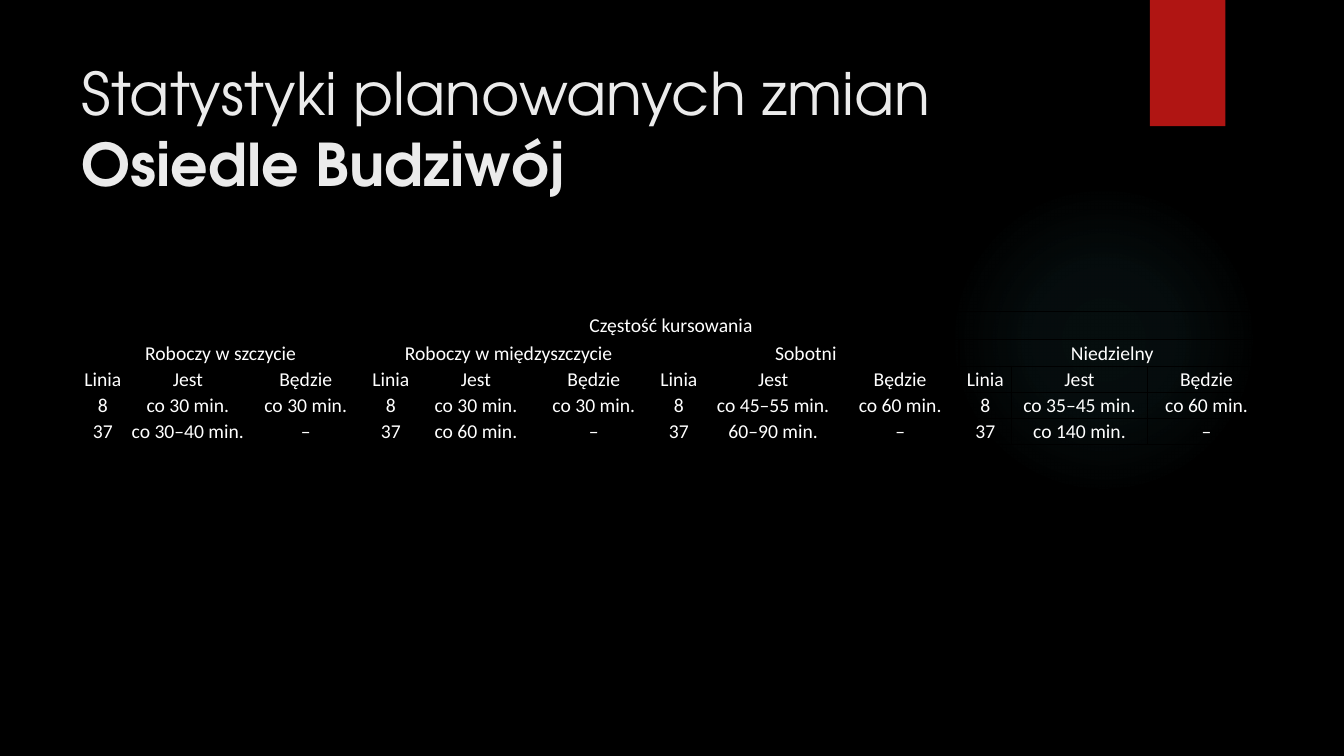
from dataclasses import dataclass

from lxml import etree
from pptx import Presentation
from pptx.dml.color import RGBColor
from pptx.enum.shapes import MSO_SHAPE
from pptx.enum.text import MSO_ANCHOR, PP_ALIGN
from pptx.oxml import parse_xml
from pptx.oxml.ns import nsdecls, qn
from pptx.util import Cm, Pt

ELLIPSE = MSO_SHAPE.OVAL
RECTANGLE = MSO_SHAPE.RECTANGLE
MIDDLE = MSO_ANCHOR.MIDDLE
CENTER = PP_ALIGN.CENTER


@dataclass(frozen=True)
class Theme:
    background: str = "000000"
    glow: str = "50B9C1"
    accent: str = "B01513"
    title: str = "EBEBEB"
    body: str = "FFFFFF"
    border: str = "000000"
    title_font: str = "TeX Gyre Adventor"
    body_font: str = "Calibri"
    title_size: float = 42
    body_size: float = 14
    thick: float = 1
    thin: float = 0.5


THEME = Theme()
GLOW_STOPS = [(0, 7), (36, 6), (69, 0)]
GROUP_SIZE = 3
TABLE_TITLE = "Częstość kursowania"
HEADINGS = ["Linia", "Jest", "Będzie"]
DAY_TYPES = [
    ("Roboczy w szczycie", 2.97,
     [("8", "co 30 min.", "co 30 min."), ("37", "co 30–40 min.", "–")]),
    ("Roboczy w międzyszczycie", 2.97,
     [("8", "co 30 min.", "co 30 min."), ("37", "co 60 min.", "–")]),
    ("Sobotni", 3.43,
     [("8", "co 45–55 min.", "co 60 min."), ("37", "60–90 min.", "–")]),
    ("Niedzielny", 3.43,
     [("8", "co 35–45 min.", "co 60 min."), ("37", "co 140 min.", "–")]),
]


def apply_format(target, values):
    for name, value in values.items():
        setattr(target, name, value)


def style_font(font, name, size, color, bold=False):
    apply_format(font, {"name": name, "size": Pt(size), "bold": bold})
    font.color.rgb = RGBColor.from_string(color)


def add_plain_shape(page, kind, left, top, width, height):
    shape = page.shapes.add_shape(kind, Cm(left), Cm(top), Cm(width), Cm(height))
    shape.shadow.inherit = False
    shape.line.fill.background()
    return shape


def add_glow(page):
    glow = add_plain_shape(page, ELLIPSE, 23.9, 4.65, 7.82, 7.82)
    stops = "".join(
        f'<a:gs pos="{position * 1000}"><a:srgbClr val="{THEME.glow}">'
        f'<a:alpha val="{alpha * 1000}"/></a:srgbClr></a:gs>'
        for position, alpha in GLOW_STOPS
    )
    gradient = parse_xml(
        f'<a:gradFill {nsdecls("a")} rotWithShape="1"><a:gsLst>{stops}</a:gsLst>'
        '<a:path path="circle"><a:fillToRect l="50000" t="50000" r="50000" b="50000"/>'
        '</a:path></a:gradFill>'
    )
    glow.element.spPr.find(qn("a:prstGeom")).addnext(gradient)


def add_ribbon(page):
    ribbon = add_plain_shape(page, RECTANGLE, 28.98, 0, 1.9, 3.18)
    ribbon.fill.solid()
    ribbon.fill.fore_color.rgb = RGBColor.from_string(THEME.accent)


def add_title(page, first_line, bold_line):
    box = page.shapes.add_textbox(Cm(1.8), Cm(1.27), Cm(26.14), Cm(3.89))
    apply_format(box.text_frame, {"word_wrap": True, "vertical_anchor": MIDDLE})
    para = box.text_frame.paragraphs[0]
    style_font(para.font, THEME.title_font, THEME.title_size, THEME.title)
    for text, bold in [(first_line, False), (bold_line, True)]:
        if bold:
            para.add_line_break()
        span = para.add_run()
        span.text = text
        style_font(span.font, THEME.title_font, THEME.title_size, THEME.title, bold)


def set_borders(cell, widths):
    properties = cell._tc.get_or_add_tcPr()
    for side in "LRTB":
        line = etree.SubElement(
            properties, qn(f"a:ln{side}"), w=str(Pt(widths.get(side, THEME.thin)))
        )
        fill = etree.SubElement(line, qn("a:solidFill"))
        etree.SubElement(fill, qn("a:srgbClr"), val=THEME.border)


def border_widths(row, column):
    position = column % GROUP_SIZE
    thick_sides = {
        "L": position == 0,
        "R": position == GROUP_SIZE - 1,
        "T": row < 2,
        "B": row == 0,
    }
    return {side: THEME.thick for side, thick in thick_sides.items() if thick}


def style_cell(cell, widths):
    apply_format(cell, {
        "vertical_anchor": MIDDLE,
        "margin_left": Cm(0.03),
        "margin_right": Cm(0.03),
        "margin_top": Cm(0.03),
        "margin_bottom": 0,
    })
    set_borders(cell, widths)
    cell.fill.background()


def write_cell(cell, text):
    para = cell.text_frame.paragraphs[0]
    para.alignment = CENTER
    span = para.add_run()
    span.text = text
    style_font(span.font, THEME.body_font, THEME.body_size, THEME.body)


def add_timetable(page):
    column_widths = [
        width for _, middle, _ in DAY_TYPES for width in (1.32, middle, 2.97)
    ]
    row_heights = [0.71] + [0.66] * 4
    frame = page.shapes.add_table(
        len(row_heights), len(column_widths),
        Cm(1.93), Cm(7.85), Cm(sum(column_widths)), Cm(sum(row_heights)),
    )
    table = frame.table
    apply_format(table, {"first_row": False, "horz_banding": False})
    for column, width in zip(table.columns, column_widths):
        column.width = Cm(width)
    for row, height in zip(table.rows, row_heights):
        row.height = Cm(height)
    for row in range(len(row_heights)):
        for column in range(len(column_widths)):
            style_cell(table.cell(row, column), border_widths(row, column))

    table.cell(0, 0).merge(table.cell(0, len(column_widths) - 1))
    write_cell(table.cell(0, 0), TABLE_TITLE)
    for group, (day_type, _, services) in enumerate(DAY_TYPES):
        first = group * GROUP_SIZE
        table.cell(1, first).merge(table.cell(1, first + GROUP_SIZE - 1))
        write_cell(table.cell(1, first), day_type)
        for row, texts in enumerate([HEADINGS, *services], start=2):
            for column, text in enumerate(texts, start=first):
                write_cell(table.cell(row, column), text)


def main():
    deck = Presentation()
    apply_format(deck, {"slide_width": Cm(33.87), "slide_height": Cm(19.05)})
    page = deck.slides.add_slide(deck.slide_layouts[6])
    page.background.fill.solid()
    page.background.fill.fore_color.rgb = RGBColor.from_string(THEME.background)
    add_glow(page)
    add_ribbon(page)
    add_title(page, "Statystyki planowanych zmian", "Osiedle Budziwój")
    add_timetable(page)
    deck.save("out.pptx")


if __name__ == "__main__":
    main()
